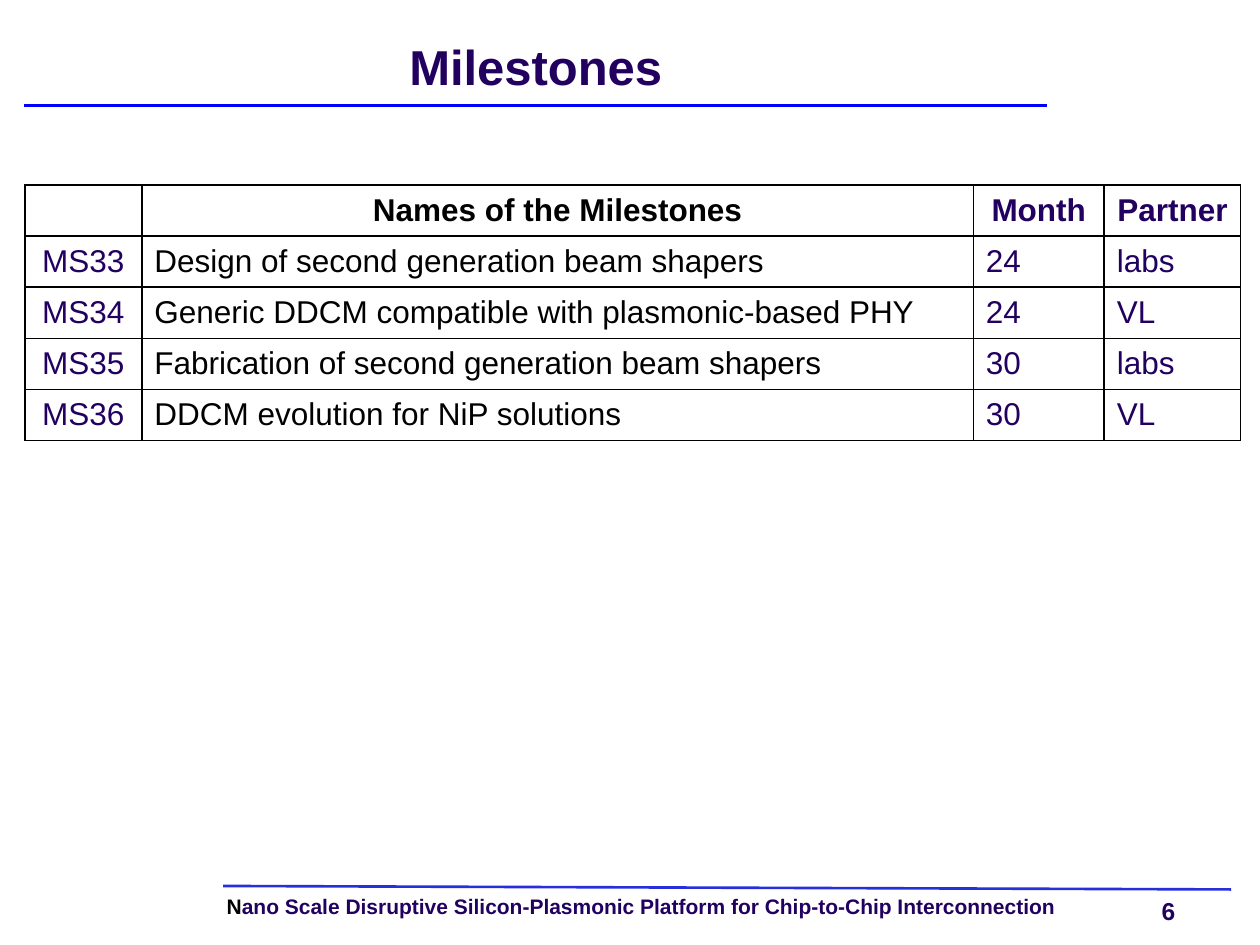
from lxml.etree import SubElement
from pptx import Presentation
from pptx.dml.color import RGBColor
from pptx.enum.shapes import MSO_CONNECTOR
from pptx.enum.text import MSO_ANCHOR, MSO_AUTO_SIZE, PP_ALIGN
from pptx.oxml.ns import qn
from pptx.util import Cm, Pt

INDIGO = RGBColor(0x22, 0x00, 0x60)
BLACK = RGBColor(0x00, 0x00, 0x00)
WHITE = RGBColor(0xFF, 0xFF, 0xFF)
TITLE_BLUE = RGBColor(0x00, 0x00, 0xFF)
FOOTER_BLUE = RGBColor(0x26, 0x2F, 0xDA)

COLUMN_WIDTHS = [2.36, 16.76, 2.64, 2.75]
ROW_HEIGHT = 1.03
NAME_COLUMN = 1
MILESTONES = [
    ["", "Names of the Milestones", "Month", "Partner"],
    ["MS33", "Design of second generation beam shapers", "24", "labs"],
    ["MS34", "Generic DDCM compatible with plasmonic-based PHY", "24", "VL"],
    ["MS35", "Fabrication of second generation beam shapers", "30", "labs"],
    ["MS36", "DDCM evolution for NiP solutions", "30", "VL"],
]


class SlideBuilder:
    font_name = "Arial"

    def __init__(self, page):
        self.page = page

    def style(self, span, size, color, bold=True):
        span.font.name = self.font_name
        span.font.size = Pt(size)
        span.font.bold = bold
        span.font.color.rgb = color

    def clear_margins(self, frame):
        frame.margin_left = frame.margin_right = 0
        frame.margin_top = frame.margin_bottom = 0

    def title(self, text, left, top, width, height):
        box = self.page.shapes.title
        box.left, box.top = Cm(left), Cm(top)
        box.width, box.height = Cm(width), Cm(height)
        frame = box.text_frame
        frame.text = text
        frame.auto_size = MSO_AUTO_SIZE.NONE
        frame.vertical_anchor = MSO_ANCHOR.MIDDLE
        self.clear_margins(frame)
        para = frame.paragraphs[0]
        para.alignment = PP_ALIGN.CENTER
        para.line_spacing = Pt(32)
        self.style(para.runs[0], 28, INDIGO)

    def text(self, pieces, left, top, width, height, size, spacing=1.0, wrap=True):
        box = self.page.shapes.add_textbox(Cm(left), Cm(top), Cm(width), Cm(height))
        frame = box.text_frame
        frame.word_wrap = wrap
        self.clear_margins(frame)
        para = frame.paragraphs[0]
        para.line_spacing = spacing
        for text, color in pieces:
            span = para.add_run()
            span.text = text
            self.style(span, size, color)

    def line(self, start, end, color):
        rule = self.page.shapes.add_connector(
            MSO_CONNECTOR.STRAIGHT, *[Cm(value) for value in (*start, *end)])
        rule.line.color.rgb = color
        rule.line.width = Pt(1.5)
        SubElement(rule._element.spPr, qn("a:effectLst"))

    def border(self, cell):
        properties = cell._tc.get_or_add_tcPr()
        for side in ("a:lnL", "a:lnR", "a:lnT", "a:lnB"):
            edge = SubElement(properties, qn(side), w=str(Pt(1)))
            fill = SubElement(edge, qn("a:solidFill"))
            SubElement(fill, qn("a:srgbClr"), val=str(BLACK))

    def table(self, rows, left, top, widths, row_height):
        grid = self.page.shapes.add_table(
            len(rows), len(widths), Cm(left), Cm(top),
            Cm(sum(widths)), Cm(row_height * len(rows))).table
        grid.first_row = grid.horz_banding = False
        for column, width in zip(grid.columns, widths):
            column.width = Cm(width)
        for row_index, row in enumerate(rows):
            grid.rows[row_index].height = Cm(row_height)
            for column_index, text in enumerate(row):
                cell = grid.cell(row_index, column_index)
                self.border(cell)
                cell.fill.solid()
                cell.fill.fore_color.rgb = WHITE
                cell.vertical_anchor = MSO_ANCHOR.MIDDLE
                cell.text_frame.text = text
                para = cell.text_frame.paragraphs[0]
                is_header = row_index == 0
                if is_header or column_index == 0:
                    para.alignment = PP_ALIGN.CENTER
                color = BLACK if column_index == NAME_COLUMN else INDIGO
                for span in para.runs:
                    self.style(span, 18, color, is_header)


def main():
    deck = Presentation()
    deck.slide_width, deck.slide_height = Cm(25.4), Cm(19.05)
    builder = SlideBuilder(deck.slides.add_slide(deck.slide_layouts[5]))

    # Footer
    builder.text([("N", BLACK),
                  ("ano Scale Disruptive Silicon-Plasmonic Platform for "
                   "Chip-to-Chip Interconnection", INDIGO)],
                 4.57, 18.06, 18.14, 0.46, 12, spacing=0.9)
    builder.text([("6", INDIGO)], 23.42, 18.06, 1.02, 0.58, 14, wrap=False)
    builder.line((4.5, 17.86), (24.82, 17.93), FOOTER_BLUE)

    # Heading
    builder.line((0.48, 2.13), (21.11, 2.13), TITLE_BLUE)
    builder.title("Milestones", 0.5, 0.5, 20.6, 1.7)

    # Milestone table
    builder.table(MILESTONES, 0.5, 3.73, COLUMN_WIDTHS, ROW_HEIGHT)

    deck.save("out.pptx")


if __name__ == "__main__":
    main()
